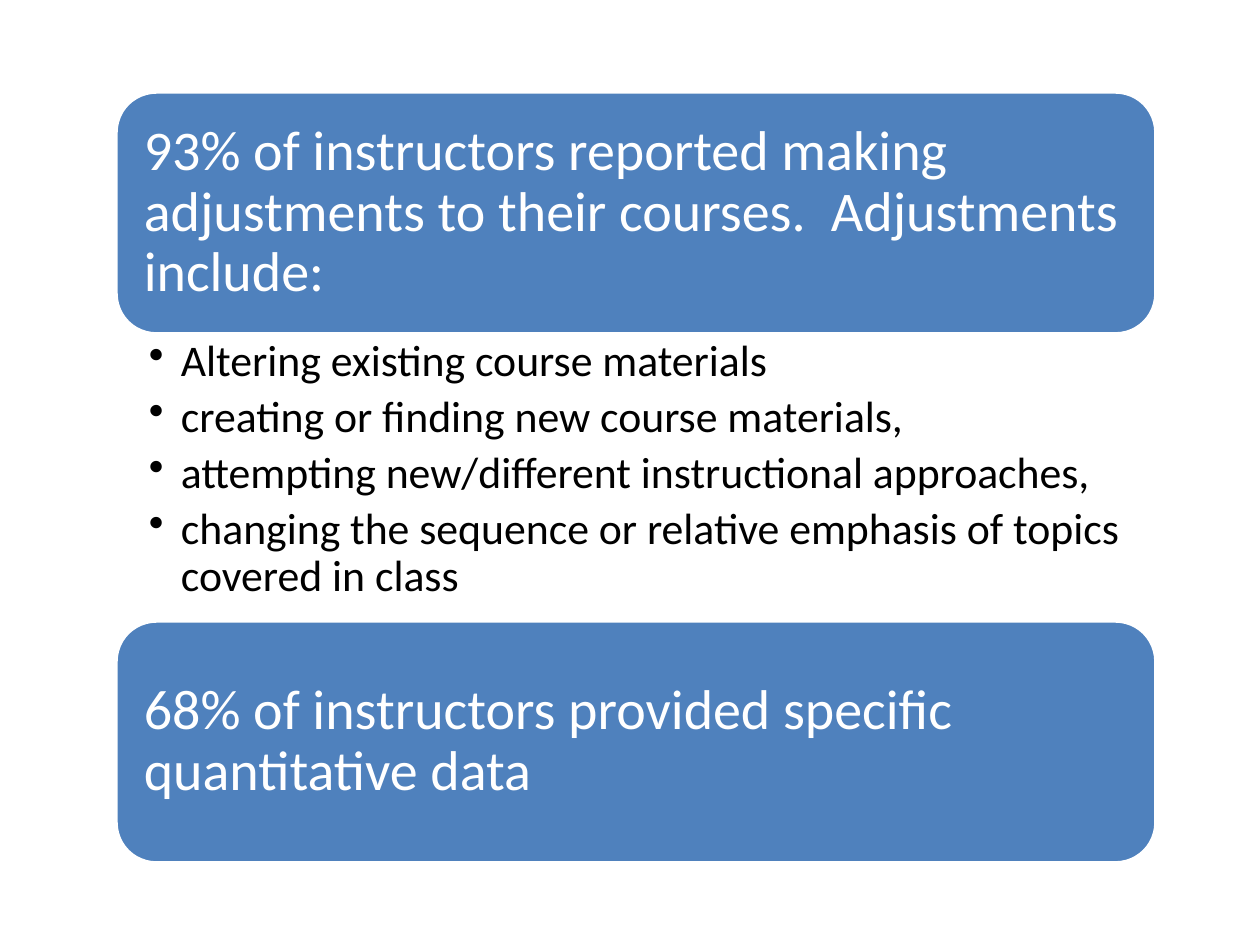
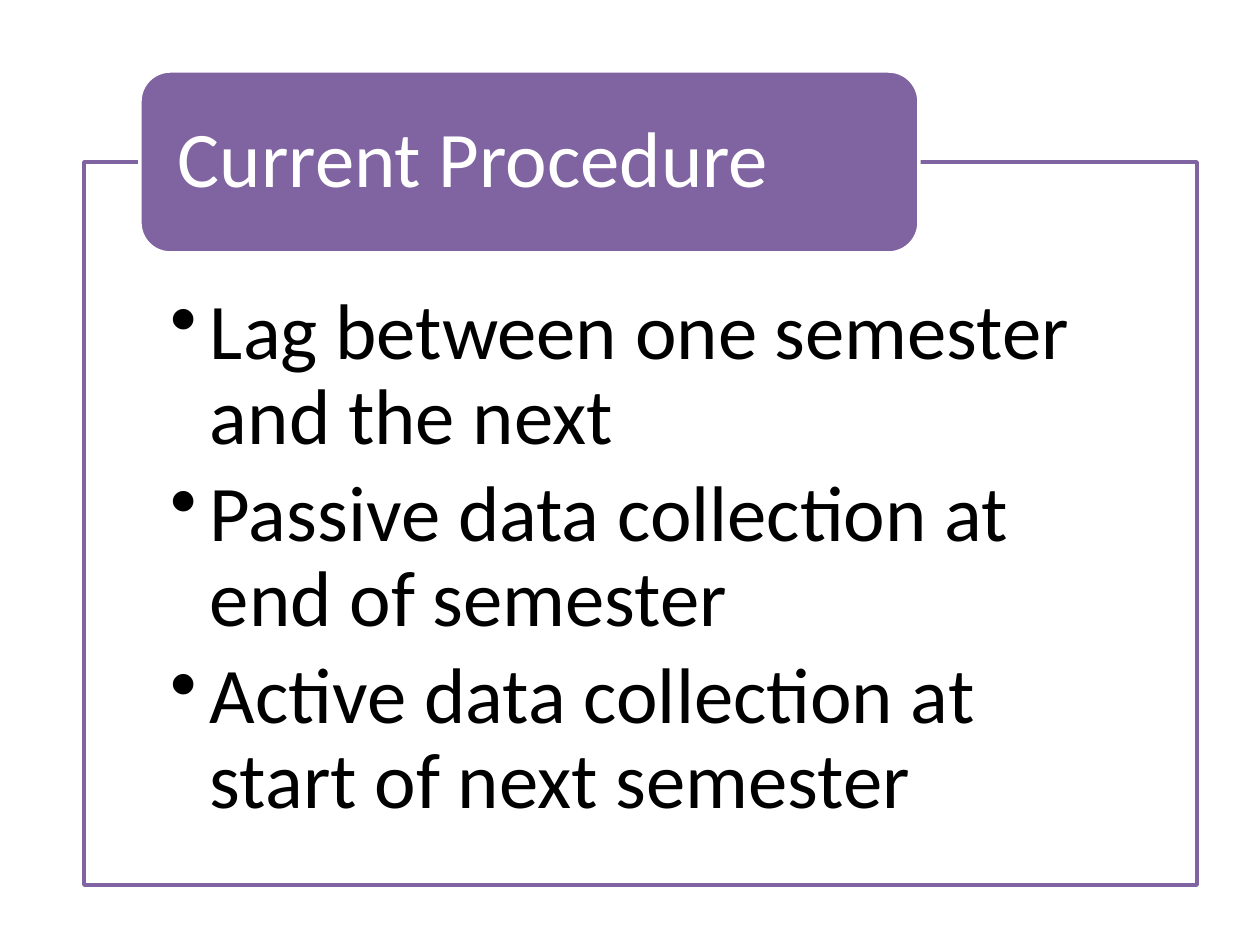
from lxml.etree import SubElement
from pptx import Presentation
from pptx.dml.color import RGBColor
from pptx.enum.shapes import MSO_SHAPE as Shape
from pptx.enum.text import MSO_ANCHOR as Anchor, PP_ALIGN as Align
from pptx.oxml.ns import qn
from pptx.util import Emu, Pt

PX = 914400 / 126
BLUE = RGBColor(0x4F, 0x81, 0xBD)
PURPLE = RGBColor(0x80, 0x64, 0xA2)
WHITE = RGBColor(0xFF, 0xFF, 0xFF)
BLACK = RGBColor(0x00, 0x00, 0x00)
FONT = "Calibri"
BLANK_LAYOUT = 6

FINDINGS_LEFT, FINDINGS_TOP, FINDINGS_WIDTH = 116, 92, 1040
BANNER_HEIGHT, ADJUSTMENTS_HEIGHT = 242, 287
ADJUSTMENTS = [
    "Altering existing course materials",
    "creating or finding new course materials,",
    "attempting new/different instructional approaches,",
    "changing the sequence or relative emphasis of topics covered in class",
]
PROCEDURE_STEPS = [
    "Lag between one semester and the next",
    "Passive data collection at end of semester",
    "Active data collection at start of next semester",
]


def px(length):
    return Emu(round(length * PX))


def set_all(target, values):
    for name, value in values.items():
        setattr(target, name, value)


def set_frame(frame, insets, anchor):
    left, top, right, bottom = map(px, insets)
    set_all(frame, {
        "word_wrap": True, "vertical_anchor": anchor,
        "margin_left": left, "margin_top": top,
        "margin_right": right, "margin_bottom": bottom,
    })


def write(paragraph, text, size, color, space_after=0):
    paragraph.text = text
    set_all(paragraph, {"alignment": Align.LEFT, "line_spacing": 0.9,
                        "space_after": Pt(space_after)})
    set_all(paragraph.font, {"name": FONT, "size": Pt(size)})
    paragraph.font.color.rgb = color


def add_panel(slide, kind, box, fill, line):
    panel = slide.shapes.add_shape(kind, *map(px, box))
    panel.shadow.inherit = False
    panel.fill.solid()
    panel.fill.fore_color.rgb = fill
    panel.line.color.rgb = line
    panel.line.width = Pt(2)
    return panel


def add_banner(slide, box, text, size, fill, insets):
    banner = add_panel(slide, Shape.ROUNDED_RECTANGLE, box, fill, WHITE)
    set_frame(banner.text_frame, insets, Anchor.MIDDLE)
    write(banner.text_frame.paragraphs[0], text, size, WHITE)


def fill_bullets(frame, items, size, insets, indent, space_after):
    set_frame(frame, insets, Anchor.TOP)
    for index, item in enumerate(items):
        paragraph = frame.add_paragraph() if index else frame.paragraphs[0]
        paragraph.level = 1
        properties = paragraph._p.get_or_add_pPr()
        properties.set("marL", str(px(indent)))
        properties.set("indent", str(-px(indent)))
        SubElement(properties, qn("a:buChar")).set("char", "•")
        write(paragraph, item, size, BLACK, space_after)


def set_opacity(shape, percent):
    color = shape._element.spPr.find(qn("a:solidFill"))[0]
    SubElement(color, qn("a:alpha")).set("val", str(percent * 1000))


def build_findings(slide):
    adjustments_top = FINDINGS_TOP + BANNER_HEIGHT
    data_top = adjustments_top + ADJUSTMENTS_HEIGHT
    banners = [
        (FINDINGS_TOP, "93% of instructors reported making adjustments to "
                       "their courses.  Adjustments include:"),
        (data_top, "68% of instructors provided specific quantitative data"),
    ]
    for top, text in banners:
        add_banner(slide, (FINDINGS_LEFT, top, FINDINGS_WIDTH, BANNER_HEIGHT),
                   text, 32, BLUE, (16, 16, 16, 16))
    adjustments = slide.shapes.add_textbox(*map(px, (
        FINDINGS_LEFT, adjustments_top, FINDINGS_WIDTH, ADJUSTMENTS_HEIGHT)))
    fill_bullets(adjustments.text_frame, ADJUSTMENTS, 25,
                 (33, 5, 32, 5), 32, 5)


def build_procedure(slide):
    steps = add_panel(slide, Shape.RECTANGLE, (84, 162, 1113, 723),
                      WHITE, PURPLE)
    set_opacity(steps, 90)
    fill_bullets(steps.text_frame, PROCEDURE_STEPS, 45,
                 (87, 129, 87, 44), 39, 7)
    add_banner(slide, (140, 71, 779, 182), "Current Procedure", 45, PURPLE,
               (29, 0, 29, 0))


def main():
    deck = Presentation()
    set_all(deck, {"slide_width": px(1260), "slide_height": px(945)})
    for build in (build_findings, build_procedure):
        build(deck.slides.add_slide(deck.slide_layouts[BLANK_LAYOUT]))
    deck.save("out.pptx")


if __name__ == "__main__":
    main()
